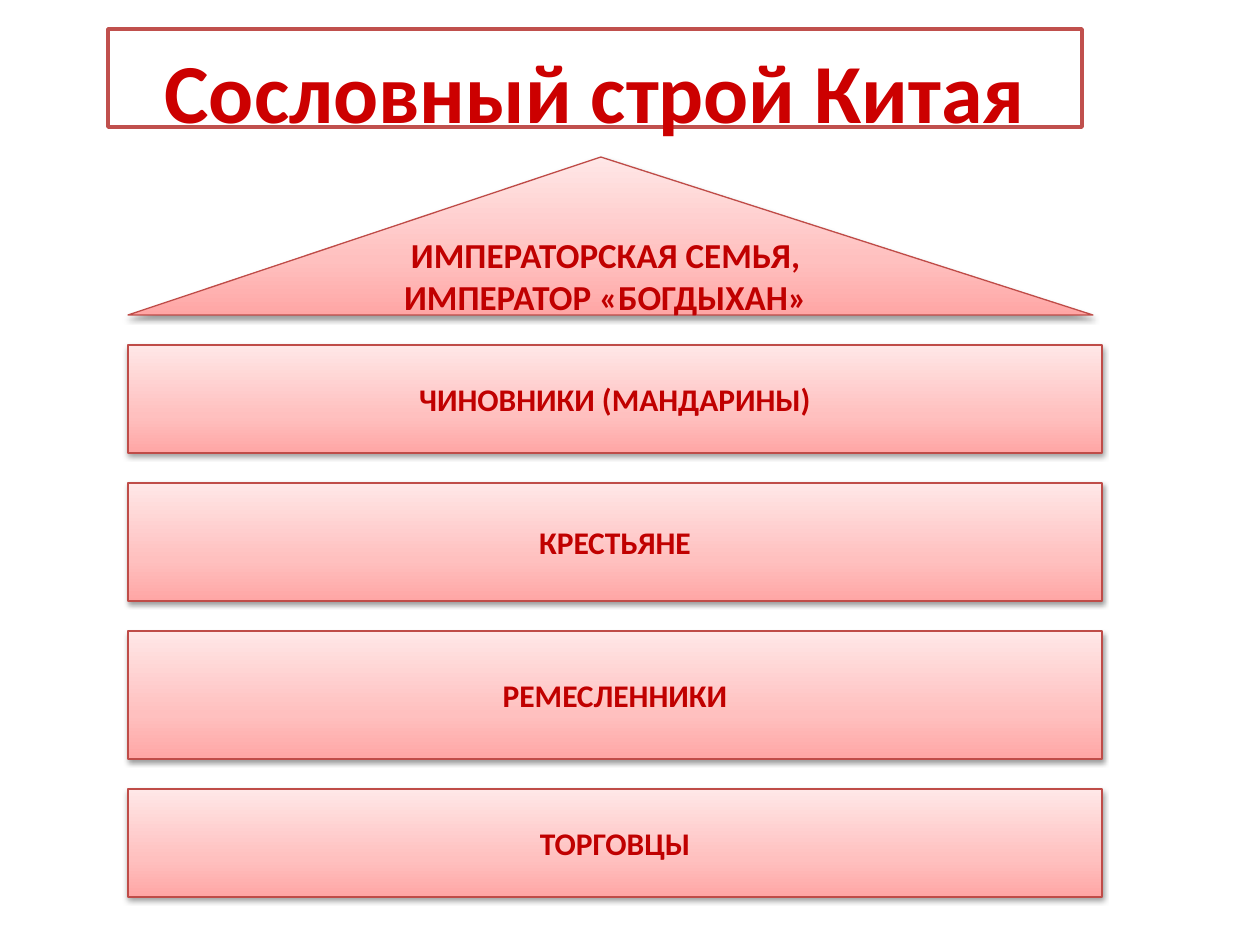
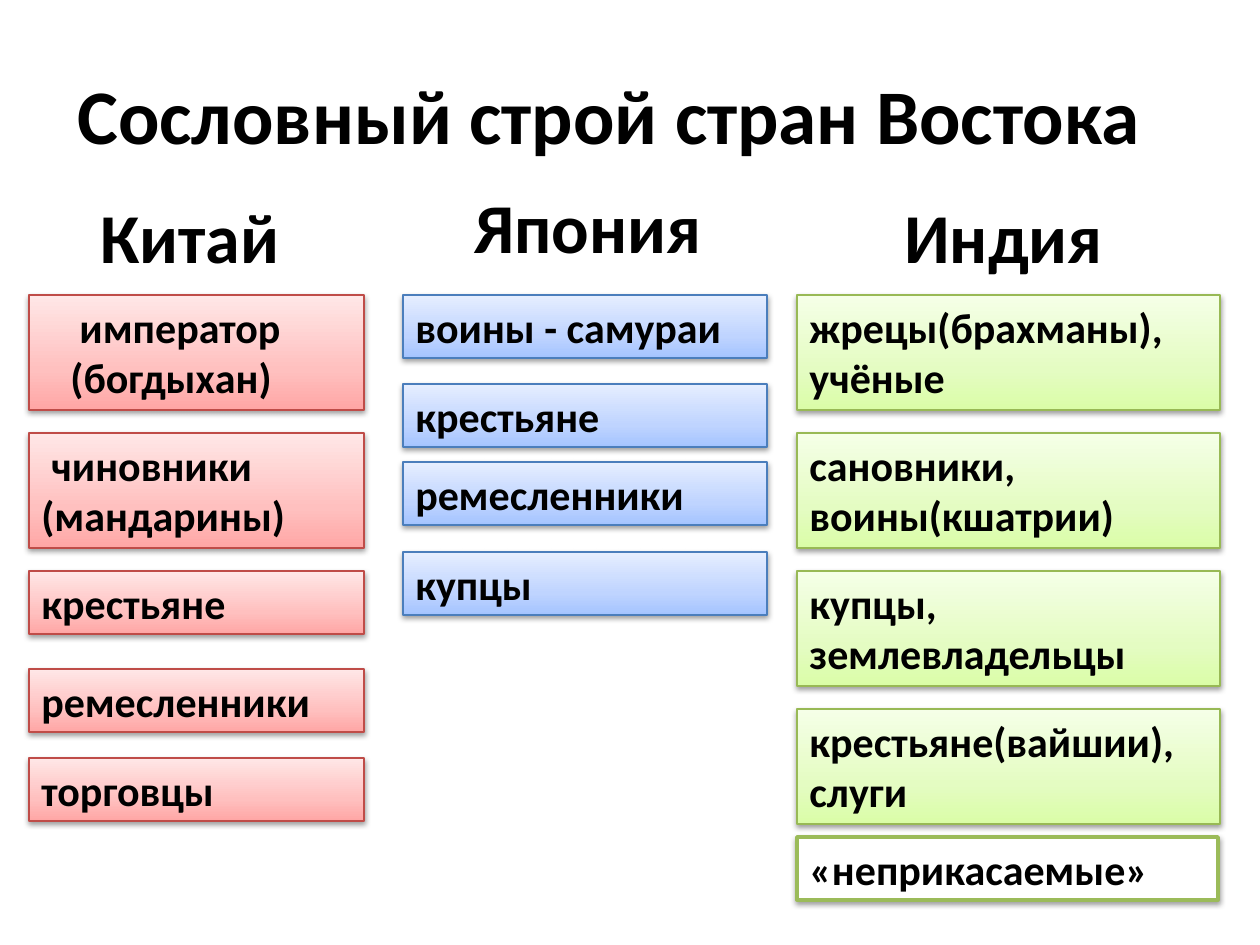
from copy import deepcopy

from lxml.etree import SubElement
from pptx import Presentation
from pptx.dml.color import RGBColor as RGB
from pptx.enum.shapes import MSO_SHAPE as SHAPE
from pptx.enum.text import MSO_ANCHOR as ANCHOR, MSO_AUTO_SIZE as AUTO, PP_ALIGN as ALIGN
from pptx.oxml.ns import qn
from pptx.util import Pt

PX = 914400 / 126  # EMU in one px
FONT = "Calibri"
BLACK = RGB(0x00, 0x00, 0x00)
WHITE = RGB(0xFF, 0xFF, 0xFF)
TITLE_RED = RGB(0xCC, 0x00, 0x00)
TEXT_RED = RGB(0xC0, 0x00, 0x00)
FRAME_RED = RGB(0xC0, 0x50, 0x4D)
FRAME_GREEN = RGB(0x9B, 0xBB, 0x59)

# Each tint: line colour, then the gradient from bottom to top
RED = (RGB(0xBF, 0x4C, 0x48), RGB(0xFF, 0xA6, 0xA5), RGB(0xFF, 0xC0, 0xBF), RGB(0xFF, 0xE7, 0xE7))
BLUE = (RGB(0x4B, 0x7E, 0xBC), RGB(0xA4, 0xC4, 0xFF), RGB(0xBF, 0xD4, 0xFF), RGB(0xE6, 0xEE, 0xFF))
GREEN = (RGB(0x98, 0xB9, 0x55), RGB(0xDA, 0xFD, 0xA7), RGB(0xE4, 0xFC, 0xC2), RGB(0xF5, 0xFF, 0xE7))
STOPS = (0, 0.35, 1)


def write(shape, text, size, color, align, anchor):
    """Fill the shape with bold text, one paragraph a line."""
    frame = shape.text_frame
    frame.text = text
    frame.word_wrap = True
    frame.auto_size = AUTO.NONE
    frame.vertical_anchor = anchor
    for para in frame.paragraphs:
        para.alignment = align
        font = para.font
        font.name, font.size, font.bold = FONT, Pt(size), True
        font.color.rgb = color
    return frame


def add_block(slide, kind, box, tint):
    """Add a shape with a three-stop gradient and a soft shadow below."""
    block = slide.shapes.add_shape(kind, *(round(n * PX) for n in box))
    block.line.color.rgb = tint[0]
    block.line.width = Pt(0.75)
    fill = block.fill
    fill.gradient()
    fill.gradient_angle = 90
    stops = block._element.spPr.find(".//" + qn("a:gsLst"))
    stops.insert(1, deepcopy(stops[0]))
    for stop, pos, color in zip(fill.gradient_stops, STOPS, tint[1:]):
        stop.position = pos
        stop.color.rgb = color
    block.shadow.inherit = False
    effects = block._element.spPr.find(qn("a:effectLst"))
    shade = SubElement(effects, qn("a:outerShdw"), blurRad="40000", dist="20000",
                       dir="5400000", rotWithShape="0")
    tone = SubElement(shade, qn("a:srgbClr"), val="000000")
    SubElement(tone, qn("a:alpha"), val="38000")
    return block


prs = Presentation()
prs.slide_width, prs.slide_height = round(1260 * PX), round(945 * PX)
layout = prs.slide_layouts[5]

# Slide 1: estates of China
slide = prs.slides.add_slide(layout)
title = slide.shapes.title
title.left, title.top, title.width, title.height = (round(n * PX) for n in (108, 29, 974, 98))
title.fill.solid()
title.fill.fore_color.rgb = WHITE
title.line.color.rgb = FRAME_RED
title.line.width = Pt(2)
frame = write(title, "Сословный строй Китая", 48, TITLE_RED, ALIGN.CENTER, ANCHOR.TOP)
frame.margin_top = round(10 * PX)

LEFT, GAP = 128, 30
roof = add_block(slide, SHAPE.ISOSCELES_TRIANGLE, (LEFT, 157, 965, 158), RED)
roof.adjustments[0] = 0.49
write(roof, "ИМПЕРАТОРСКАЯ СЕМЬЯ, ИМПЕРАТОР «БОГДЫХАН»", 20, TEXT_RED, ALIGN.CENTER, ANCHOR.MIDDLE)

top = 157 + 158 + GAP
for name, high in (("ЧИНОВНИКИ (МАНДАРИНЫ)", 108), ("КРЕСТЬЯНЕ", 118),
                   ("РЕМЕСЛЕННИКИ", 128), ("ТОРГОВЦЫ", 108)):
    bar = add_block(slide, SHAPE.RECTANGLE, (LEFT, top, 974, high), RED)
    write(bar, name, 18, TEXT_RED, ALIGN.CENTER, ANCHOR.MIDDLE)
    top += high + GAP

# Slide 2: estates of three countries
slide = prs.slides.add_slide(layout)
title = slide.shapes.title
title.left, title.top, title.width, title.height = (round(n * PX) for n in (29, 29, 1182, 158))
frame = write(title, "Сословный строй стран Востока", 44.1, BLACK, ALIGN.CENTER, ANCHOR.MIDDLE)
frame.margin_top = round(18 * PX)
frame.margin_right = round(34 * PX)

LOW, TALL = 63, 115
# Country, heading box, column left and width, tint, then (top, height, text)
lands = (
    ("Китай", (88, 187, 207, 97), 29, 335, RED, (
        (295, TALL, "император\n(богдыхан)"), (433, TALL, "чиновники\n(мандарины)"),
        (571, LOW, "крестьяне"), (669, LOW, "ремесленники"), (758, LOW, "торговцы"))),
    ("Япония", (462, 177, 255, 97), 403, 364, BLUE, (
        (295, LOW, "воины - самураи"), (384, LOW, "крестьяне"),
        (462, LOW, "ремесленники"), (552, LOW, "купцы"))),
    ("Индия", (892, 187, 241, 97), 797, 423, GREEN, (
        (295, TALL, "жрецы(брахманы), учёные"), (433, TALL, "сановники, воины(кшатрии)"),
        (571, TALL, "купцы,\nземлевладельцы"), (709, TALL, "крестьяне(вайшии),\nслуги"))),
)
indents = {"император": 38, "(богдыхан)": 29, "чиновники": 10}

for land, box, left, wide, tint, ranks in lands:
    head = slide.shapes.add_textbox(*(round(n * PX) for n in box))
    write(head, land, 40, BLACK, ALIGN.LEFT, ANCHOR.TOP)
    for top, high, text in ranks:
        block = add_block(slide, SHAPE.RECTANGLE, (left, top, wide, high), tint)
        frame = write(block, text, 24, BLACK, ALIGN.LEFT, ANCHOR.TOP)
        for para in frame.paragraphs:
            if para.text in indents:
                para._p.get_or_add_pPr().set("marL", str(round(indents[para.text] * PX)))

caste = add_block(slide, SHAPE.RECTANGLE, (797, 837, 421, LOW), GREEN)
caste.fill.solid()
caste.fill.fore_color.rgb = WHITE
caste.line.color.rgb = FRAME_GREEN
caste.line.width = Pt(2)
caste.shadow.inherit = False
write(caste, "«неприкасаемые»", 24, BLACK, ALIGN.LEFT, ANCHOR.TOP)

prs.save("out.pptx")
